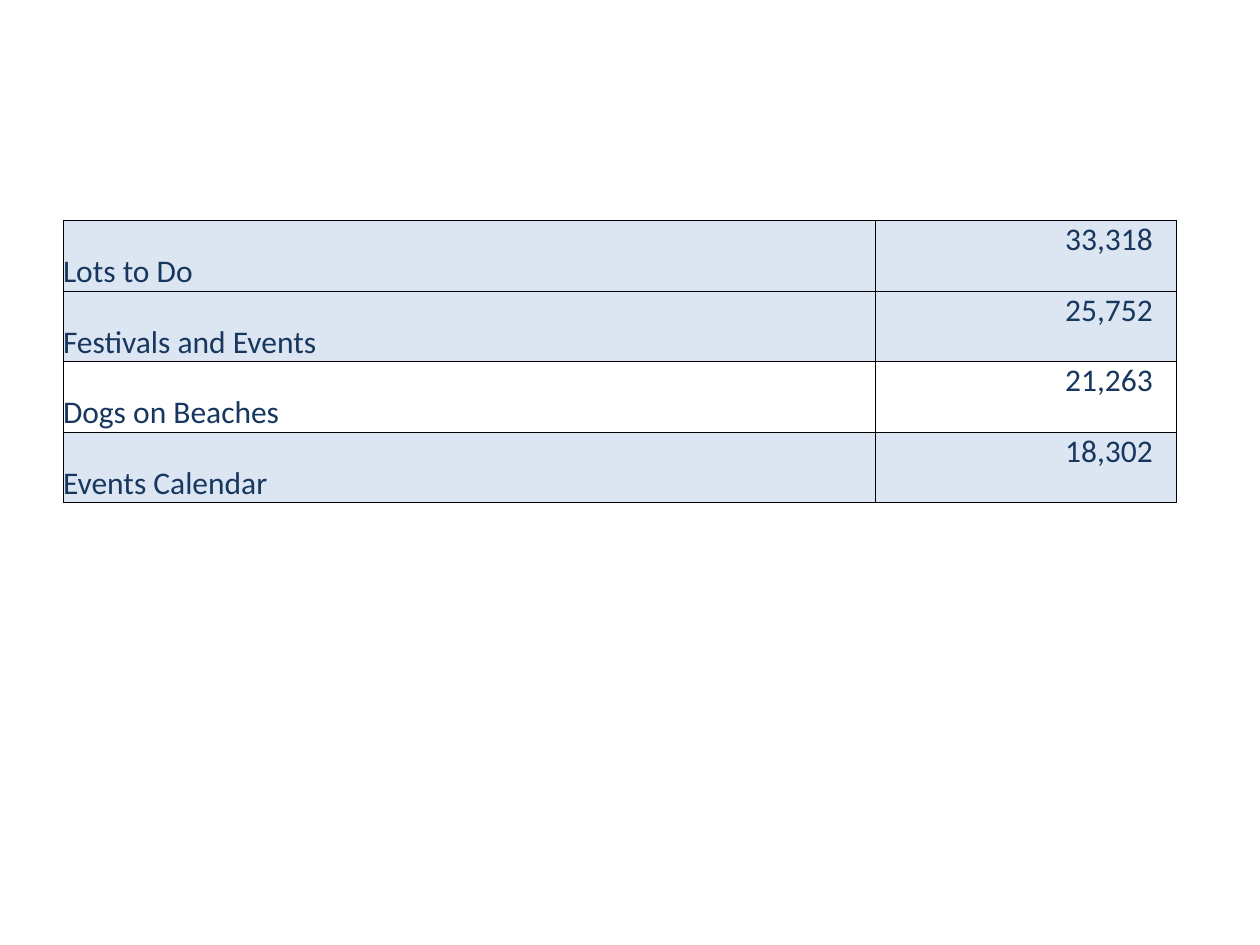
"""Build a slide with a table of topics and their visit counts."""
from lxml import etree
from pptx import Presentation
from pptx.dml.color import RGBColor
from pptx.enum.text import MSO_ANCHOR, PP_ALIGN
from pptx.oxml.ns import qn
from pptx.util import Inches, Pt

BOTTOM, TOP = MSO_ANCHOR.BOTTOM, MSO_ANCHOR.TOP
LEFT, RIGHT = PP_ALIGN.LEFT, PP_ALIGN.RIGHT
NAVY = RGBColor(0x17, 0x37, 0x5E)
PALE_BLUE = RGBColor(0xDC, 0xE6, 0xF2)
WHITE = RGBColor(0xFF, 0xFF, 0xFF)
BLACK = RGBColor(0x00, 0x00, 0x00)

TOPICS = [
    ("Lots to Do", "33,318", PALE_BLUE),
    ("Festivals and Events", "25,752", PALE_BLUE),
    ("Dogs on Beaches", "21,263", WHITE),
    ("Events Calendar", "18,302", PALE_BLUE),
]


class SlideBuilder:
    """Hold the table style and the current slide."""

    font_name = "Calibri"
    font_size = Pt(18)
    border_width = Pt(0.5)
    column_widths = (Inches(6.45), Inches(2.39))
    row_height = Inches(0.56)

    def __init__(self, presentation):
        self.slide = presentation.slides.add_slide(presentation.slide_layouts[6])

    def add_borders(self, cell):
        """Draw a line on each side of a cell."""
        properties = cell._tc.get_or_add_tcPr()
        for side in ("lnL", "lnR", "lnT", "lnB"):
            line = etree.SubElement(properties, qn(f"a:{side}"), w=str(self.border_width))
            fill = etree.SubElement(line, qn("a:solidFill"))
            etree.SubElement(fill, qn("a:srgbClr"), val=str(BLACK))

    def fill_cell(self, cell, text, color, anchor, alignment, right_margin):
        """Set the text and look of a cell."""
        self.add_borders(cell)
        cell.fill.solid()
        cell.fill.fore_color.rgb = color
        cell.margin_left = cell.margin_top = cell.margin_bottom = 0
        cell.margin_right = right_margin
        cell.vertical_anchor = anchor
        cell.text = text
        paragraph = cell.text_frame.paragraphs[0]
        paragraph.alignment = alignment
        paragraph.font.name = self.font_name
        paragraph.font.size = self.font_size
        paragraph.font.color.rgb = NAVY

    def add_topic_table(self, left, top, topics):
        """Add a table with one row for each topic."""
        table = self.slide.shapes.add_table(
            len(topics), len(self.column_widths), left, top,
            sum(self.column_widths), self.row_height * len(topics),
        ).table
        table.first_row = table.horz_banding = False
        for column, width in zip(table.columns, self.column_widths):
            column.width = width
        for index, (topic, visits, color) in enumerate(topics):
            self.fill_cell(table.cell(index, 0), topic, color, BOTTOM, LEFT, 0)
            self.fill_cell(table.cell(index, 1), visits, color, TOP, RIGHT, Inches(0.19))


def main():
    """Create and save the presentation."""
    presentation = Presentation()
    presentation.slide_width = Inches(10)
    presentation.slide_height = Inches(7.5)
    builder = SlideBuilder(presentation)
    builder.add_topic_table(Inches(0.5), Inches(1.75), TOPICS)
    presentation.save("out.pptx")


if __name__ == "__main__":
    main()
